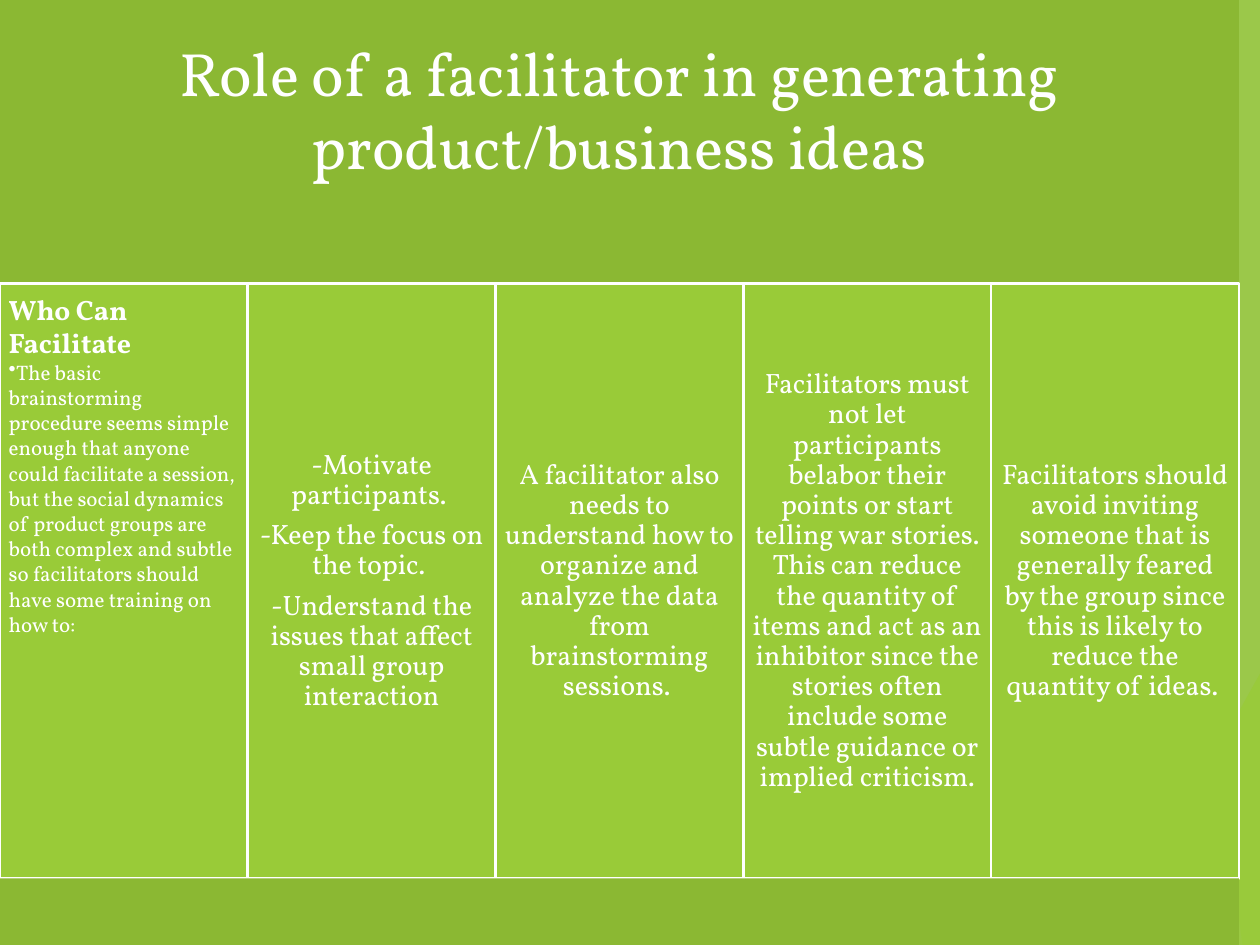
"""Build a slide on the role of a facilitator in generating ideas."""
from dataclasses import dataclass

from lxml.etree import SubElement
from pptx import Presentation
from pptx.dml.color import RGBColor as RGB
from pptx.enum.shapes import MSO_SHAPE as Preset
from pptx.enum.text import MSO_ANCHOR as Anchor, PP_ALIGN as Align
from pptx.oxml.ns import qn
from pptx.util import Pt

WIDTH, HEIGHT = 720, 540
BAND_WIDTH, TITLE_HEIGHT, COLUMN_HEIGHT = 708, 162, 340


@dataclass(frozen=True)
class Theme:
    font: str = "Vollkorn"
    text: str = "FFFFFF"
    background: str = "40594C"
    band: str = "8BB833"
    column: str = "99CB38"
    leaf: str = "63A537"
    forest: str = "4A7C29"
    mint: str = "C2E088"
    title_size: int = 35
    body_size: int = 16
    bullet_size: int = 12


class SlideBuilder:
    def __init__(self, slide, theme):
        self.slide = slide
        self.theme = theme
        fill = slide.background.fill
        fill.solid()
        fill.fore_color.rgb = RGB.from_string(theme.background)

    def paint(self, shape, color):
        shape.shadow.inherit = False
        shape.fill.solid()
        shape.fill.fore_color.rgb = RGB.from_string(color)
        shape.line.fill.background()

    def facet(self, top, bottom_left, color, opacity):
        left, top_edge = top
        builder = self.slide.shapes.build_freeform(Pt(left), Pt(top_edge))
        corners = [(bottom_left, HEIGHT), (WIDTH, HEIGHT), (WIDTH, top_edge)]
        builder.add_line_segments([(Pt(x), Pt(y)) for x, y in corners])
        shape = builder.convert_to_shape()
        self.paint(shape, color)
        color_element = shape._element.spPr.find(qn("a:solidFill"))[0]
        SubElement(color_element, qn("a:alpha"), val=str(opacity * 1000))

    def box(self, left, top, width, height, color):
        shape = self.slide.shapes.add_shape(
            Preset.RECTANGLE, Pt(left), Pt(top), Pt(width), Pt(height))
        self.paint(shape, color)
        return shape

    def set_text(self, shape, lines, size, inset, anchor=Anchor.MIDDLE, align=Align.CENTER):
        frame = shape.text_frame
        frame.word_wrap = True
        frame.vertical_anchor = anchor
        frame.margin_left = frame.margin_right = Pt(inset)
        frame.margin_top = frame.margin_bottom = Pt(inset)
        frame.text = "\n".join(lines)
        for paragraph in frame.paragraphs:
            paragraph.alignment = align
            font = paragraph.runs[0].font
            font.name = self.theme.font
            font.size = Pt(size)
            font.color.rgb = RGB.from_string(self.theme.text)
        return frame

    def title(self, text):
        shape = self.box(0, 0, BAND_WIDTH, TITLE_HEIGHT, self.theme.band)
        frame = self.set_text(shape, [text], self.theme.title_size, 10.8)
        frame.margin_bottom = Pt(49)

    def column_box(self, index, count):
        width = BAND_WIDTH / count
        shape = self.box(index * width, TITLE_HEIGHT, width, COLUMN_HEIGHT, self.theme.column)
        shape.line.color.rgb = RGB.from_string(self.theme.text)
        shape.line.width = Pt(1.5)
        return shape

    def column(self, index, count, lines):
        frame = self.set_text(self.column_box(index, count), lines, self.theme.body_size, 5)
        for paragraph in frame.paragraphs:
            paragraph.line_spacing = 0.9
            paragraph.space_after = Pt(5.7)

    def heading_column(self, index, count, heading, point):
        frame = self.set_text(self.column_box(index, count), [heading, point],
                              self.theme.body_size, 5, Anchor.TOP, Align.LEFT)
        first, second = frame.paragraphs
        first.runs[0].font.bold = True
        second.level = 1
        second.runs[0].font.size = Pt(self.theme.bullet_size)
        properties = second._p.get_or_add_pPr()
        properties.set("marL", "0")
        properties.set("indent", "0")
        SubElement(properties, qn("a:buChar"), char="•")


def main():
    theme = Theme()
    presentation = Presentation()
    presentation.slide_width, presentation.slide_height = Pt(WIDTH), Pt(HEIGHT)
    slide = presentation.slides.add_slide(presentation.slide_layouts[6])
    builder = SlideBuilder(slide, theme)

    facets = [
        ((702, 0), 543, theme.column, 30),
        ((567, 0), 662, theme.column, 20),
        ((WIDTH, 309), 523, theme.leaf, 72),
        ((552, 0), 698, theme.forest, 70),
        ((706, 0), 653, theme.mint, 70),
        ((636, 0), 710, theme.column, 65),
        ((WIDTH, 385), 634, theme.column, 80),
    ]
    for facet in facets:
        builder.facet(*facet)

    builder.title("Role of a facilitator in generating product/business ideas")
    columns = [
        ["-Motivate participants. ",
         "-Keep the focus on the topic. ",
         "-Understand the issues that affect small group interaction"],
        ["A facilitator also needs to understand how to organize and analyze "
         "the data from brainstorming sessions. "],
        ["Facilitators must not let participants belabor their points or start "
         "telling war stories. This can reduce the quantity of items and act as "
         "an inhibitor since the stories often include some subtle guidance or "
         "implied criticism."],
        ["Facilitators should avoid inviting someone that is generally feared by "
         "the group since this is likely to reduce the quantity of ideas. "],
    ]
    count = len(columns) + 1
    builder.heading_column(
        0, count, "Who Can Facilitate",
        "The basic brainstorming procedure seems simple enough that anyone could "
        "facilitate a session, but the social dynamics of product groups are both "
        "complex and subtle so facilitators should have some training on how to:")
    for index, lines in enumerate(columns, start=1):
        builder.column(index, count, lines)

    footer_top = TITLE_HEIGHT + COLUMN_HEIGHT
    builder.box(0, footer_top, BAND_WIDTH, HEIGHT - footer_top, theme.band)
    presentation.save("out.pptx")


if __name__ == "__main__":
    main()
